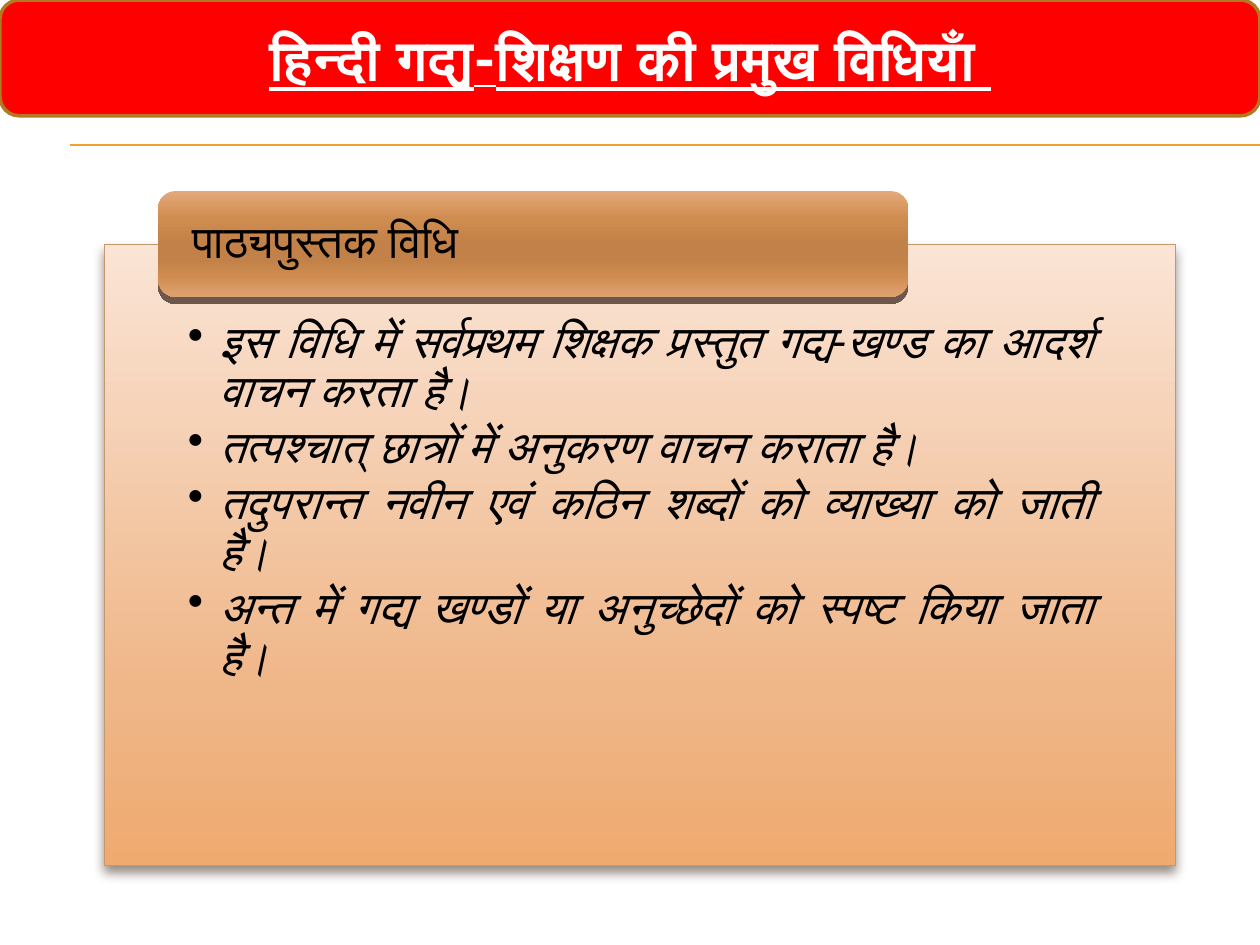
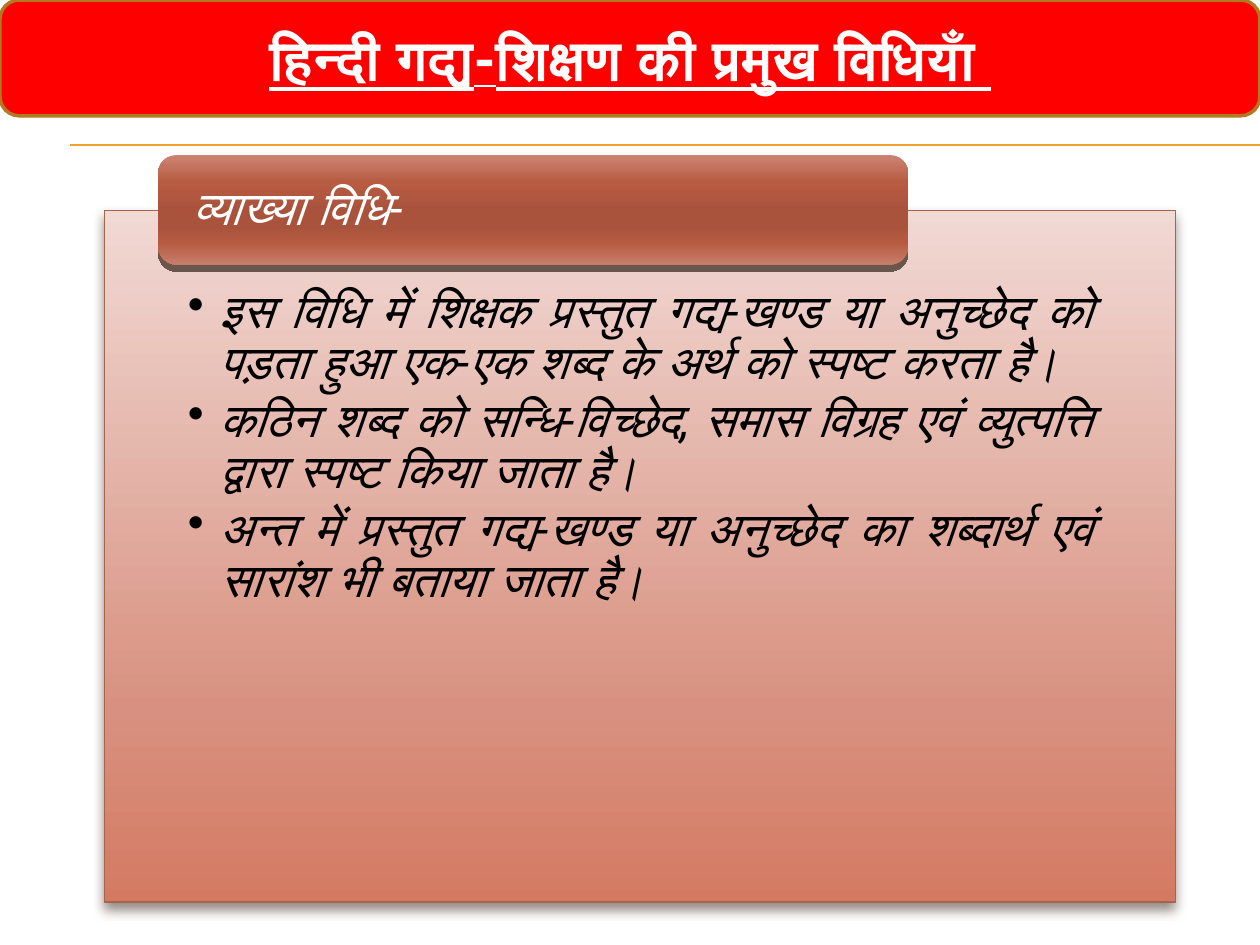
from lxml.etree import SubElement
from pptx import Presentation
from pptx.dml.color import RGBColor
from pptx.enum.shapes import MSO_CONNECTOR as Connector, MSO_SHAPE as Shape
from pptx.enum.text import MSO_ANCHOR as Anchor, PP_ALIGN as Align
from pptx.oxml.ns import qn
from pptx.util import Pt

COLORS = {
    "band": "FF0000",
    "band_edge": "B27822",
    "rule": "F0A22E",
    "shadow": "4E3B30",
    "light": "FFFFFF",
    "dark": "000000",
    "orange_edge": "C3986D",
    "brick_edge": "A5644E",
}

ORANGE = {
    "edge": "orange_edge",
    "panel": [(0, "FAE4D5"), (72, "EFB688"), (100, "EFAA6F")],
    "tab": [(0, "E4A97A"), (25, "D08D50"), (50, "C18148"),
            (65, "C18148"), (80, "CF8C4F"), (100, "DEA372")],
}
BRICK = {
    "edge": "brick_edge",
    "panel": [(0, "F1D9D4"), (72, "D89180"), (100, "D47A62")],
    "tab": [(0, "CD8473"), (25, "B75B42"), (50, "AA533C"),
            (65, "AA533C"), (80, "B65B42"), (100, "C77D6B")],
}

HEADING = [
    ("हिन्दी ", "Open Sans"),
    ("गद्य-", "Roboto"),
    ("शिक्षण की प्रमुख विधियाँ ", "Open Sans"),
]

METHODS = [
    {
        "theme": ORANGE, "size": 26,
        "name": "पाठ्यपुस्तक विधि", "name_color": "dark", "name_italic": False,
        "tab_top": 109.2, "tab_height": 60.5,
        "panel_top": 139.7, "panel_height": 355, "inset_top": 42.5,
        "steps": [
            "इस विधि में सर्वप्रथम शिक्षक प्रस्तुत गद्य-खण्ड का आदर्श वाचन करता है।",
            "तत्पश्चात् छात्रों में अनुकरण वाचन कराता है।",
            "तदुपरान्त नवीन एवं कठिन शब्दों को व्याख्या को जाती है।",
            "अन्त में गद्य खण्डों या अनुच्छेदों को स्पष्ट किया जाता है।",
        ],
    },
    {
        "theme": BRICK, "size": 27,
        "name": "व्याख्या विधि-", "name_color": "light", "name_italic": True,
        "tab_top": 88.6, "tab_height": 62.6,
        "panel_top": 120.2, "panel_height": 395.3, "inset_top": 44,
        "steps": [
            "इस विधि में शिक्षक प्रस्तुत गद्य-खण्ड या अनुच्छेद को पड़ता हुआ एक-एक शब्द के अर्थ को स्पष्ट करता है।",
            "कठिन शब्द को सन्धि-विच्छेद, समास विग्रह एवं व्युत्पत्ति द्वारा स्पष्ट किया जाता है।",
            "अन्त में प्रस्तुत गद्य-खण्ड या अनुच्छेद का शब्दार्थ एवं सारांश भी बताया जाता है।",
        ],
    },
]


def rgb(name):
    return RGBColor.from_string(COLORS[name])


def add_xml(parent, tag, **attributes):
    return SubElement(parent, qn(tag), {key: str(value) for key, value in attributes.items()})


class Deck:
    def __init__(self):
        self.presentation = Presentation()
        self.presentation.slide_width = Pt(720)
        self.presentation.slide_height = Pt(540)
        self.slide = None

    def new_slide(self):
        self.slide = self.presentation.slides.add_slide(self.presentation.slide_layouts[5])
        self.heading()
        for y in (82.8, 83.1):
            self.rule(y)

    def heading(self):
        box = [Pt(length) for length in (0, 0, 720, 66.2)]
        band = self.slide.shapes.add_shape(Shape.ROUNDED_RECTANGLE, *box)
        band.fill.solid()
        band.fill.fore_color.rgb = rgb("band")
        band.line.color.rgb = rgb("band_edge")
        band.line.width = Pt(2)
        band.shadow.inherit = False
        title = self.slide.shapes.title
        title.element.addprevious(band.element)
        title.left, title.top, title.width, title.height = box
        title.text_frame.vertical_anchor = Anchor.MIDDLE
        paragraph = title.text_frame.paragraphs[0]
        paragraph.alignment = Align.CENTER
        for text, font in HEADING:
            self.run(paragraph, text, 32, "light", font, bold=True, underline=True)

    def rule(self, y):
        rule = self.slide.shapes.add_connector(Connector.STRAIGHT, Pt(40.3), Pt(y), Pt(720), Pt(y))
        rule.line.color.rgb = rgb("rule")
        rule.line.width = Pt(0.75)
        add_xml(rule.element.spPr, "a:effectLst")

    def run(self, paragraph, text, size, color, font="Roboto", **style):
        run = paragraph.add_run()
        run.text = text
        run.font.size = Pt(size)
        run.font.name = font
        run.font.color.rgb = rgb(color)
        for key, value in style.items():
            setattr(run.font, key, value)

    def gradient_box(self, kind, box, stops, edge, blur, opacity):
        shape = self.slide.shapes.add_shape(kind, *map(Pt, box))
        properties = shape.element.spPr
        gradient = add_xml(properties, "a:gradFill", rotWithShape=1)
        stop_list = add_xml(gradient, "a:gsLst")
        for position, color in stops:
            stop = add_xml(stop_list, "a:gs", pos=position * 1000)
            add_xml(stop, "a:srgbClr", val=color)
        add_xml(gradient, "a:lin", ang=90 * 60000, scaled=0)
        if edge:
            shape.line.color.rgb = rgb(edge)
            shape.line.width = Pt(0.79)
        else:
            shape.line.fill.background()
        shape.shadow.inherit = False
        shadow = add_xml(properties.find(qn("a:effectLst")), "a:outerShdw", blurRad=Pt(blur),
                         dist=Pt(4), dir=90 * 60000, rotWithShape=0)
        tint = add_xml(shadow, "a:srgbClr", val=COLORS["shadow"])
        add_xml(tint, "a:alpha", val=opacity * 1000)
        return shape

    def frame(self, shape, anchor, side, top, bottom):
        frame = shape.text_frame
        frame.word_wrap = True
        frame.vertical_anchor = anchor
        frame.margin_left = frame.margin_right = Pt(side)
        frame.margin_top, frame.margin_bottom = Pt(top), Pt(bottom)
        return frame

    def panel(self, method):
        box = (59.8, method["panel_top"], 612, method["panel_height"])
        theme = method["theme"]
        panel = self.gradient_box(Shape.RECTANGLE, box, theme["panel"], theme["edge"], 6, 60)
        frame = self.frame(panel, Anchor.TOP, 47.5, method["inset_top"], 14.5)
        for index, step in enumerate(method["steps"]):
            paragraph = frame.add_paragraph() if index else frame.paragraphs[0]
            self.bullet(paragraph)
            self.run(paragraph, step, method["size"], "dark", italic=True)

    def bullet(self, paragraph):
        paragraph.level = 1
        paragraph.alignment = Align.JUSTIFY
        paragraph.line_spacing = 0.9
        paragraph.space_after = Pt(4)
        properties = paragraph._p.get_or_add_pPr()
        properties.set("marL", str(Pt(18)))
        properties.set("indent", str(-Pt(18)))
        add_xml(properties, "a:buChar", char="•")

    def tab(self, method):
        box = (90.4, method["tab_top"], 428.6, method["tab_height"])
        tab = self.gradient_box(Shape.ROUNDED_RECTANGLE, box, method["theme"]["tab"], None, 0, 82)
        paragraph = self.frame(tab, Anchor.MIDDLE, 16.4, 0, 0).paragraphs[0]
        paragraph.alignment = Align.LEFT
        paragraph.line_spacing = 0.9
        self.run(paragraph, method["name"], method["size"], method["name_color"],
                 italic=method["name_italic"])


def main():
    deck = Deck()
    for method in METHODS:
        deck.new_slide()
        deck.panel(method)
        deck.tab(method)
    deck.presentation.save("out.pptx")


if __name__ == "__main__":
    main()
